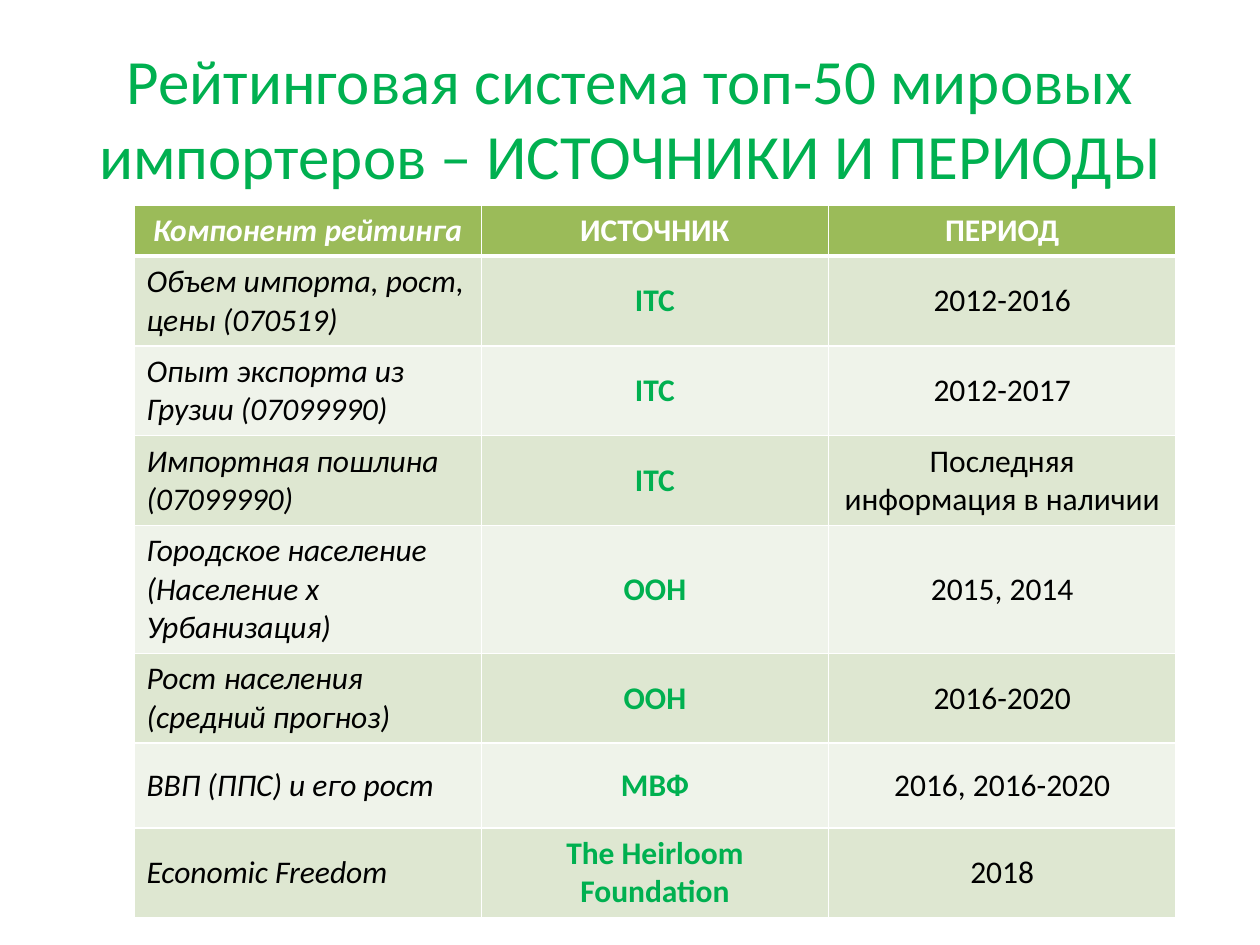
import pptx
import pptx.util
import pptx.dml.color
import pptx.enum.text
import pptx.oxml.ns
import lxml.etree

SCALE = 914400 / 126
ALIGN = pptx.enum.text.PP_ALIGN
MIDDLE = pptx.enum.text.MSO_ANCHOR.MIDDLE

HEADS = ["Компонент рейтинга", "ИСТОЧНИК", "ПЕРИОД"]
ROWS = [
    ["Объем импорта, рост, цены (070519)", "ITC", "2012-2016"],
    ["Опыт экспорта из Грузии (07099990)", "ITC", "2012-2017"],
    ["Импортная пошлина (07099990)", "ITC", "Последняя информация в наличии"],
    ["Городское население (Население x Урбанизация)", "ООН", "2015, 2014"],
    ["Рост населения (средний прогноз)", "ООН", "2016-2020"],
    ["ВВП (ППС) и его рост", "МВФ", "2016, 2016-2020"],
    ["Economic Freedom", "The Heirloom Foundation", "2018"],
]
HIGHS = [51, 90, 89, 90, 128, 89, 85, 88]


def px(size):
    return pptx.util.Emu(round(size * SCALE))


def color(code):
    return pptx.dml.color.RGBColor.from_string(code)


def write(frame, text, size=18, fill="000000", bold=False, italic=False,
          align=ALIGN.CENTER, face="Calibri"):
    para = frame.paragraphs[0]
    para.alignment = align
    run = para.add_run()
    run.text = text
    font = run.font
    font.name = face
    font.size = pptx.util.Pt(size)
    font.bold = bold
    font.italic = italic
    font.color.rgb = color(fill)


def edge(cell, order, side, width, code="FFFFFF"):
    name = pptx.oxml.ns.qn
    line = lxml.etree.Element(name("a:ln" + side),
                              w=str(pptx.util.Pt(width)))
    solid = lxml.etree.SubElement(line, name("a:solidFill"))
    lxml.etree.SubElement(solid, name("a:srgbClr"), val=code)
    cell._tc.get_or_add_tcPr().insert(order, line)


class Deck:
    green = "00B050"
    head = "9BBB59"
    bands = ["DEE7D1", "EFF3EA"]

    def __init__(self, wide, high):
        self.show = pptx.Presentation()
        self.show.slide_width = px(wide)
        self.show.slide_height = px(high)
        self.slide = self.show.slides.add_slide(self.show.slide_layouts[5])

    def title(self, text, left, top, wide, high):
        shape = self.slide.shapes.title
        shape.left, shape.top = px(left), px(top)
        shape.width, shape.height = px(wide), px(high)
        frame = shape.text_frame
        frame.auto_size = pptx.enum.text.MSO_AUTO_SIZE.NONE
        frame.word_wrap = True
        frame.vertical_anchor = MIDDLE
        write(frame, text, size=36, fill=self.green)

    def cell(self, cell, text, back, lines, style):
        cell.fill.solid()
        cell.fill.fore_color.rgb = color(back)
        cell.vertical_anchor = MIDDLE
        for order, (side, width) in enumerate(zip("LRTB", lines)):
            edge(cell, order, side, width)
        write(cell.text_frame, text, **style)

    def table(self, heads, rows, left, top, wide, highs):
        grid = self.slide.shapes.add_table(
            len(highs), len(heads), px(left), px(top),
            px(wide), px(sum(highs))).table
        for col in grid.columns:
            col.width = px(wide / len(heads))
        for row, high in zip(grid.rows, highs):
            row.height = px(high)
        for j, text in enumerate(heads):
            style = dict(fill="FFFFFF", bold=True, italic=j == 0)
            self.cell(grid.cell(0, j), text, self.head, [1, 1, 1, 3], style)
        styles = [dict(italic=True, align=ALIGN.LEFT),
                  dict(fill=self.green, bold=True), {}]
        for i, row in enumerate(rows):
            lines = [1, 1, 1 if i else 3, 1]
            for j, text in enumerate(row):
                self.cell(grid.cell(i + 1, j), text, self.bands[i % 2],
                          lines, styles[j])


def main():
    deck = Deck(1260, 945)
    deck.title("Рейтинговая система топ-50 мировых импортеров – "
               "ИСТОЧНИКИ И ПЕРИОДЫ", 63, 38, 1134, 158)
    deck.table(HEADS, ROWS, 134, 205, 1042, HIGHS)
    deck.show.save("out.pptx")


if __name__ == "__main__":
    main()
